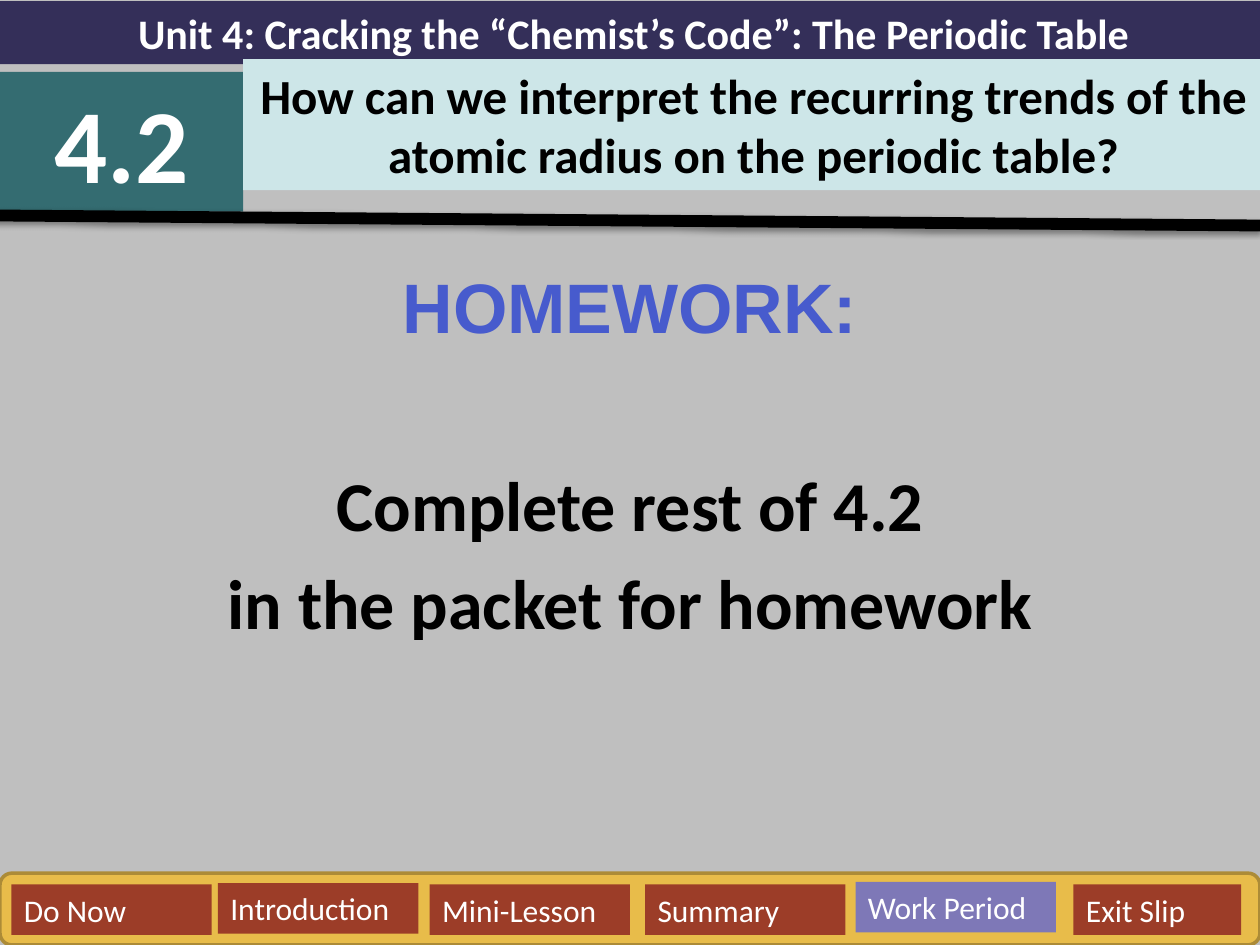
from dataclasses import dataclass

from lxml.etree import fromstring
from pptx import Presentation
from pptx.dml.color import RGBColor as RGB
from pptx.enum.shapes import MSO_CONNECTOR as LINE, MSO_SHAPE as SHAPE
from pptx.enum.text import MSO_ANCHOR as ANCHOR, PP_ALIGN as ALIGN
from pptx.util import Inches, Pt


@dataclass(frozen=True)
class Theme:
    font: str = "Calibri"
    accent: str = "Arial"
    back: str = "BFBFBF"
    navy: str = "342F59"
    teal: str = "346C71"
    pale: str = "CDE6E8"
    gold: str = "E8BC4A"
    edge: str = "AC8B37"
    rust: str = "9C3D28"
    violet: str = "7E78B7"
    blue: str = "475BCD"
    white: str = "FFFFFF"
    black: str = "000000"
    tab: int = 18
    unit: int = 24
    ask: int = 28
    body: int = 40
    num: int = 60


theme = Theme()


def paint(shape, box, fill):
    """Place a shape and give it a plain fill without a line."""
    shape.left, shape.top, shape.width, shape.height = map(Inches, box)
    shape.fill.solid()
    shape.fill.fore_color.rgb = RGB.from_string(fill)
    shape.line.fill.background()


def write(par, text, size, color, bold=True, font=theme.font, align=ALIGN.CENTER):
    """Add one formatted run to a paragraph."""
    par.alignment = align
    run = par.add_run()
    run.text = text
    run.font.name = font
    run.font.size = Pt(size)
    run.font.bold = bold
    run.font.color.rgb = RGB.from_string(color)


prs = Presentation()
prs.slide_width, prs.slide_height = Inches(10), Inches(7.5)
slide = prs.slides.add_slide(prs.slide_layouts[0])
slide.background.fill.solid()
slide.background.fill.fore_color.rgb = RGB.from_string(theme.back)
shapes = slide.shapes

# Unit title
title = shapes.title
paint(title, (0, 0.01, 10.06, 0.5), theme.navy)
title.text_frame.vertical_anchor = ANCHOR.MIDDLE
write(title.text_frame.paragraphs[0],
      "Unit 4: Cracking the “Chemist’s Code”: The Periodic Table",
      theme.unit, theme.white)

# Homework
body = slide.placeholders[1]
body.left, body.top = Inches(0), Inches(2.04)
body.width, body.height = Inches(10), Inches(5.46)
frame = body.text_frame
tasks = [
    ("HOMEWORK:", theme.accent, theme.blue, 8),
    ("Complete rest of 4.2", theme.font, theme.black, 65),
    ("in the packet for homework", theme.font, theme.black, 8),
]
for i, (text, font, color, gap) in enumerate(tasks):
    par = frame.add_paragraph() if i else frame.paragraphs[0]
    par.space_before = Pt(gap)
    write(par, text, theme.body, color, font=font)

# Lesson number and question
heads = [
    ("4.2", (0, 0.57, 1.93, 1.11), theme.teal, theme.num, theme.white),
    ("How can we interpret the recurring trends of the atomic radius "
     "on the periodic table?",
     (1.93, 0.47, 8.1, 1.04), theme.pale, theme.ask, theme.black),
]
for text, box, fill, size, color in heads:
    head = shapes.add_textbox(*map(Inches, box))
    paint(head, box, fill)
    head.text_frame.word_wrap = True
    write(head.text_frame.paragraphs[0], text, size, color)

# Rule with a soft shadow
rule = shapes.add_connector(LINE.STRAIGHT, Inches(-0.05), Inches(1.71),
                            Inches(10), Inches(1.79))
rule.line.color.rgb = RGB.from_string(theme.black)
rule.line.width = Pt(6.75)
rule._element.spPr.append(fromstring(
    '<a:effectLst xmlns:a="http://schemas.openxmlformats.org/drawingml/2006/main">'
    f'<a:outerShdw blurRad="{Pt(3.1)}" dist="{Pt(1.6)}" dir="5400000" rotWithShape="0">'
    f'<a:srgbClr val="{theme.black}"><a:alpha val="38000"/></a:srgbClr>'
    '</a:outerShdw></a:effectLst>'))

# Lesson stages
box = (0, 6.93, 10, 0.57)
bar = shapes.add_shape(SHAPE.ROUNDED_RECTANGLE, *map(Inches, box))
paint(bar, box, theme.gold)
bar.shadow.inherit = False
bar.line.color.rgb = RGB.from_string(theme.edge)
bar.line.width = Pt(2)

tabs = [
    ("Do Now", 0.09, 7.02, 1.59, theme.rust),
    ("Introduction", 1.73, 7.01, 1.59, theme.rust),
    ("Mini-Lesson", 3.41, 7.02, 1.59, theme.rust),
    ("Summary", 5.12, 7.02, 1.59, theme.rust),
    ("Work Period", 6.79, 7, 1.59, theme.violet),
    ("Exit Slip", 8.52, 7.02, 1.33, theme.rust),
]
for text, left, top, width, fill in tabs:
    box = (left, top, width, 0.4)
    tab = shapes.add_textbox(*map(Inches, box))
    paint(tab, box, fill)
    tab.text_frame.word_wrap = True
    write(tab.text_frame.paragraphs[0], text, theme.tab, theme.white,
          bold=False, align=ALIGN.LEFT)

prs.save("out.pptx")
